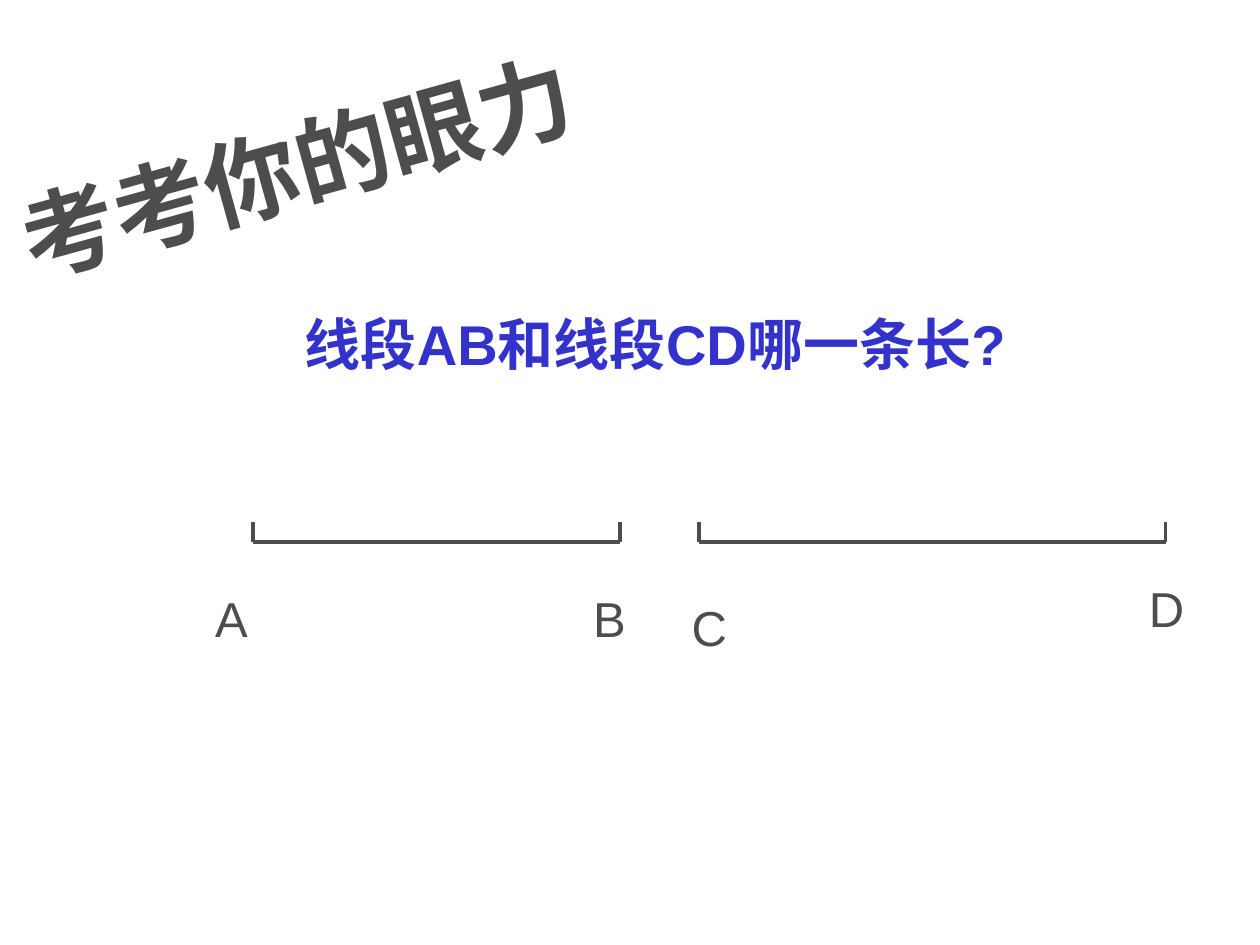
import pptx
import pptx.util
from pptx.dml.color import RGBColor
from pptx.enum.shapes import MSO_CONNECTOR
from pptx.enum.text import MSO_AUTO_SIZE
from pptx.oxml.ns import qn
from lxml import etree

Inches, Pt = pptx.util.Inches, pptx.util.Pt

GREY = RGBColor(0x4D, 0x4D, 0x4D)
BLUE = RGBColor(0x33, 0x33, 0xCC)
LATIN_FONT = "Arial"
CHINESE_FONT = "Noto Sans CJK SC"

TITLE = "考考你的眼力"
QUESTION = "线段AB和线段CD哪一条长?"
SEGMENTS = [(2.01, 4.92), (5.55, 9.25)]  # left and right ends
SEGMENT_Y, TICK_TOP = 4.3, 4.14
END_LABELS = [  # letter, left, top, width
    ("A", 1.61, 4.62, 0.46),
    ("B", 4.61, 4.62, 0.46),
    ("C", 5.39, 4.69, 0.48),
    ("D", 9.02, 4.54, 0.48),
]
LABEL_HEIGHT = 0.57


def add_text(slide, text, box, size, color=GREY, bold=False, font=LATIN_FONT):
    text_box = slide.shapes.add_textbox(*map(Inches, box))
    frame = text_box.text_frame
    frame.text = text
    frame.word_wrap = True
    frame.auto_size = MSO_AUTO_SIZE.SHAPE_TO_FIT_TEXT
    run = frame.paragraphs[0].runs[0]
    run.font.size = Pt(size)
    run.font.bold = bold
    run.font.name = font
    run.font.color.rgb = color
    east_asian = etree.SubElement(run.font._element, qn("a:ea"))
    east_asian.set("typeface", CHINESE_FONT)
    return text_box


def add_segment(slide, left, right):
    """Draw a line with an upright tick at each end, as one group."""
    group = slide.shapes.add_group_shape()
    strokes = [(left, SEGMENT_Y, right, SEGMENT_Y)]
    strokes += [(x, SEGMENT_Y, x, TICK_TOP) for x in (left, right)]
    for stroke in strokes:
        line = group.shapes.add_connector(
            MSO_CONNECTOR.STRAIGHT, *map(Inches, stroke))
        line.line.color.rgb = GREY
        line.line.width = Pt(2.25)
        etree.SubElement(line._element.spPr, qn("a:effectLst"))


def main():
    deck = pptx.Presentation()
    deck.slide_width, deck.slide_height = Inches(10), Inches(7.5)
    slide = deck.slides.add_slide(deck.slide_layouts[6])

    title = add_text(slide, TITLE, (0, 0.76, 5.08, 1), 54,
                     bold=True, font=CHINESE_FONT)
    title.rotation = 344.5
    for left, right in SEGMENTS:
        add_segment(slide, left, right)
    for letter, left, top, width in END_LABELS:
        add_text(slide, letter, (left, top, width, LABEL_HEIGHT), 28)
    add_text(slide, QUESTION, (2.32, 2.41, 5.77, 0.63), 32, BLUE, bold=True)

    deck.save("out.pptx")


if __name__ == "__main__":
    main()
